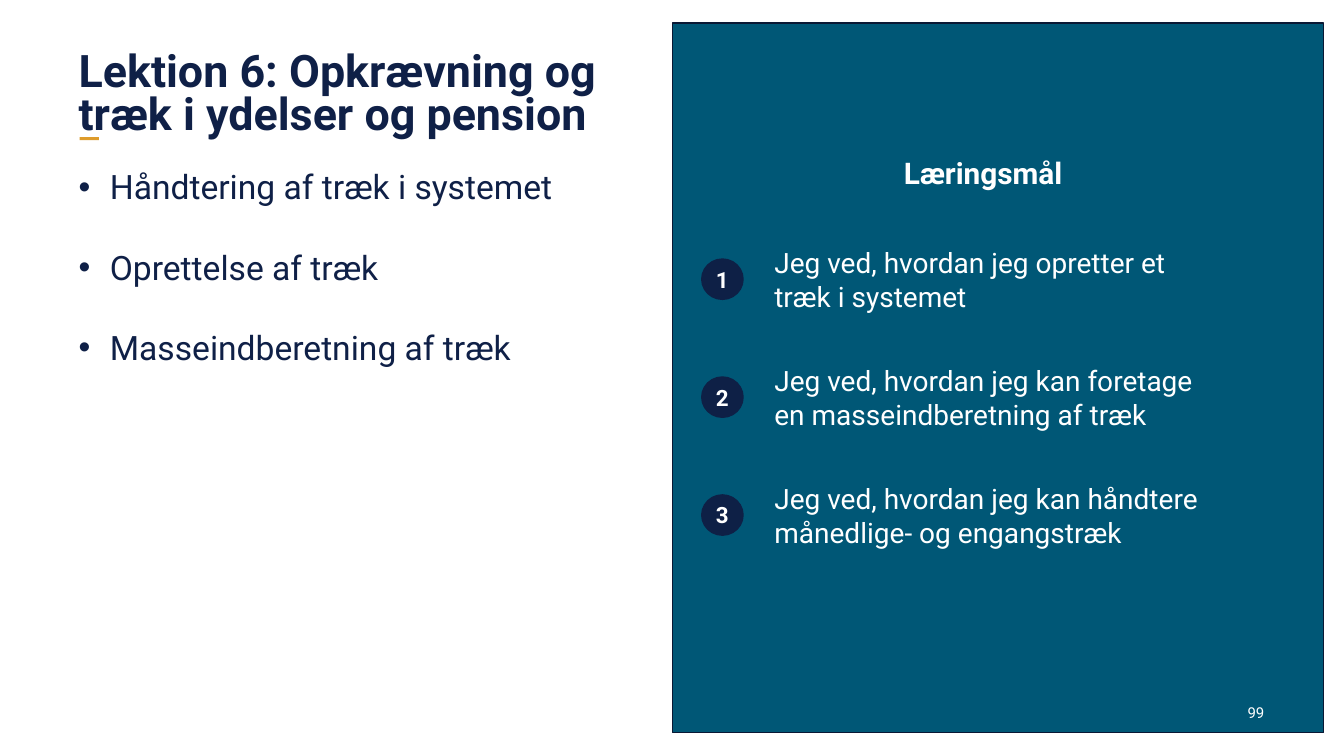
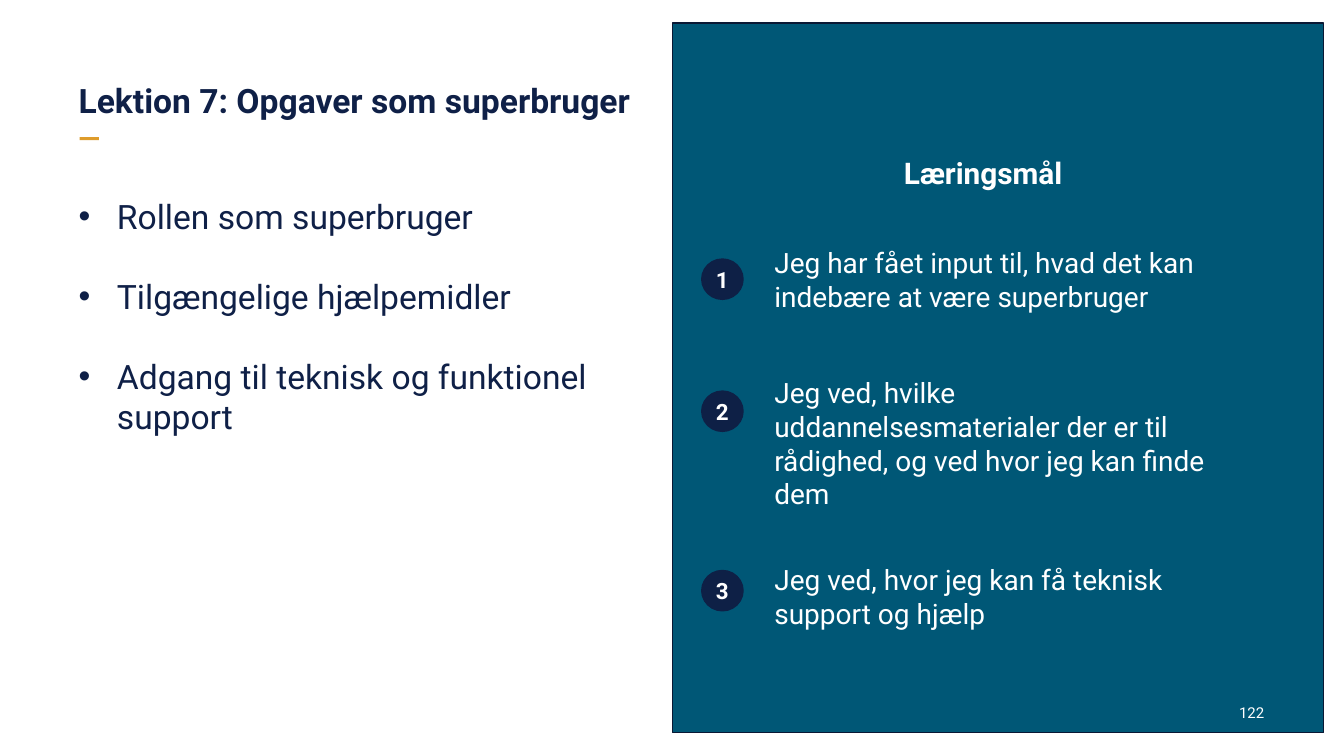
"""Build two lesson opening slides with an agenda and numbered learning goals."""
import pptx
import pptx.dml.color
import pptx.enum.shapes
import pptx.enum.text
import pptx.util

Inches = pptx.util.Inches
Pt = pptx.util.Pt
ALIGN = pptx.enum.text.PP_ALIGN
ANCHOR = pptx.enum.text.MSO_ANCHOR
SHAPE = pptx.enum.shapes.MSO_SHAPE

COLORS = {
    "navy": "0F2047",
    "badge": "0E2046",
    "panel": "005776",
    "panel_line": "0A1834",
    "accent": "DE9C2B",
    "white": "FFFFFF",
}
FONT = "Roboto"
GOAL_HEADING = "Læringsmål"
GOAL_LINE_HEIGHT = 0.34
BADGE_BOX = (6.96, 0.41, 0.4)

LESSONS = [
    {
        "title": "Lektion 6: Opkrævning og træk i ydelser og pension",
        "title_size": 32,
        "title_box": (0.78, 0.53, 5.59, 0.85),
        "topics": ["Håndtering af træk i systemet", "Oprettelse af træk", "Masseindberetning af træk"],
        "topics_top": 1.65,
        "topic_indent": 0.31,
        "goals": [
            ("Jeg ved, hvordan jeg opretter et træk i systemet", 2, 2.44, 2.57),
            ("Jeg ved, hvordan jeg kan foretage en masseindberetning af træk", 2, 3.61, 3.74),
            ("Jeg ved, hvordan jeg kan håndtere månedlige- og engangstræk", 2, 4.78, 4.91),
        ],
        "number": "99",
    },
    {
        "title": "Lektion 7: Opgaver som superbruger",
        "title_size": 24,
        "title_box": (0.78, 0.76, 5.89, 0.43),
        "topics": ["Rollen som superbruger", "Tilgængelige hjælpemidler", "Adgang til teknisk og funktionel support"],
        "topics_top": 1.94,
        "topic_indent": 0.38,
        "goals": [
            ("Jeg har fået input til, hvad det kan indebære at være superbruger", 2, 2.44, 2.57),
            ("Jeg ved, hvilke uddannelsesmaterialer der er til rådighed, og ved hvor jeg kan finde dem", 4, 3.73, 3.88),
            ("Jeg ved, hvor jeg kan få teknisk support og hjælp", 2, 5.58, 5.66),
        ],
        "number": "122",
    },
]


def rgb(name):
    """Return a named colour."""
    return pptx.dml.color.RGBColor.from_string(COLORS[name])


def place(shape, box):
    """Move and size a shape in inches."""
    shape.left, shape.top, shape.width, shape.height = map(Inches, box)


def write(shape, lines, size, color, bold=False, align=ALIGN.LEFT, anchor=ANCHOR.TOP):
    """Fill a shape with evenly formatted paragraphs."""
    frame = shape.text_frame
    frame.text = "\n".join(lines)
    frame.word_wrap = True
    frame.auto_size = pptx.enum.text.MSO_AUTO_SIZE.NONE
    frame.vertical_anchor = anchor
    frame.margin_left = frame.margin_right = frame.margin_top = frame.margin_bottom = 0
    for paragraph in frame.paragraphs:
        paragraph.alignment = align
        paragraph.space_before = Pt(0)
        for run in paragraph.runs:
            run.font.name = FONT
            run.font.size = Pt(size)
            run.font.bold = bold
            run.font.color.rgb = rgb(color)
    return frame.paragraphs


def add_filled(slide, kind, box, fill, line=None):
    """Add a flat preset shape."""
    shape = slide.shapes.add_shape(kind, *map(Inches, box))
    shape.shadow.inherit = False
    shape.fill.solid()
    shape.fill.fore_color.rgb = rgb(fill)
    if line:
        shape.line.color.rgb = rgb(line)
        shape.line.width = Pt(1)
    else:
        shape.line.fill.background()
    return shape


def add_text(slide, box, text, size, **style):
    """Add a white text box."""
    shape = slide.shapes.add_textbox(*map(Inches, box))
    write(shape, [text], size, "white", **style)


def add_background(slide, number):
    """Add the panel and accent behind the placeholders, and the page number."""
    panel = add_filled(slide, SHAPE.RECTANGLE, (6.67, 0.23, 6.46, 7.04), "panel", "panel_line")
    accent = add_filled(slide, SHAPE.RECTANGLE, (0.79, 1.36, 0.19, 0.03), "accent")
    for shape in (panel, accent):
        slide.shapes.element.insert(2, shape.element)
    add_text(slide, (11.76, 6.98, 0.78, 0.29), number, 10.7, align=ALIGN.RIGHT)


def add_topics(placeholder, lesson):
    """Write the bulleted agenda."""
    place(placeholder, (0.78, lesson["topics_top"], 5.44, 4.8))
    paragraphs = write(placeholder, lesson["topics"], 24, "navy")
    indent = Inches(lesson["topic_indent"])
    for index, paragraph in enumerate(paragraphs):
        properties = paragraph._p.get_or_add_pPr()
        properties.set("marL", str(indent))
        properties.set("indent", str(-indent))
        if index:
            paragraph.space_before = Pt(28.5)


def add_goals(slide, goals):
    """Add the numbered learning goals."""
    left, width, height = BADGE_BOX
    for number, (text, line_count, text_top, badge_top) in enumerate(goals, 1):
        badge = add_filled(slide, SHAPE.FLOWCHART_CONNECTOR, (left, badge_top, width, height), "badge", "badge")
        write(badge, [str(number)], 16, "white", bold=True, align=ALIGN.CENTER, anchor=ANCHOR.MIDDLE)
        add_text(slide, (7.68, text_top, 4.5, line_count * GOAL_LINE_HEIGHT), text, 20)


def add_lesson(presentation, lesson):
    """Add one lesson slide."""
    slide = presentation.slides.add_slide(presentation.slide_layouts[3])
    title, topics, heading = slide.placeholders
    add_background(slide, lesson["number"])
    place(title, lesson["title_box"])
    paragraphs = write(title, [lesson["title"]], lesson["title_size"], "navy", bold=True, anchor=ANCHOR.BOTTOM)
    paragraphs[0].line_spacing = Pt(30.7)
    add_topics(topics, lesson)
    place(heading, (6.96, 1.53, 5.58, 0.4))
    heading_paragraph = write(heading, [GOAL_HEADING], 21.3, "white", bold=True, align=ALIGN.CENTER)[0]
    properties = heading_paragraph._p.get_or_add_pPr()
    properties.set("marL", "0")
    properties.set("indent", "0")
    properties.append(pptx.oxml.parse_xml(
        '<a:buNone xmlns:a="http://schemas.openxmlformats.org/drawingml/2006/main"/>'))
    add_goals(slide, lesson["goals"])


def main():
    """Create and save the presentation."""
    presentation = pptx.Presentation()
    presentation.slide_width = Inches(13.33)
    presentation.slide_height = Inches(7.5)
    for lesson in LESSONS:
        add_lesson(presentation, lesson)
    presentation.save("out.pptx")


if __name__ == "__main__":
    main()
